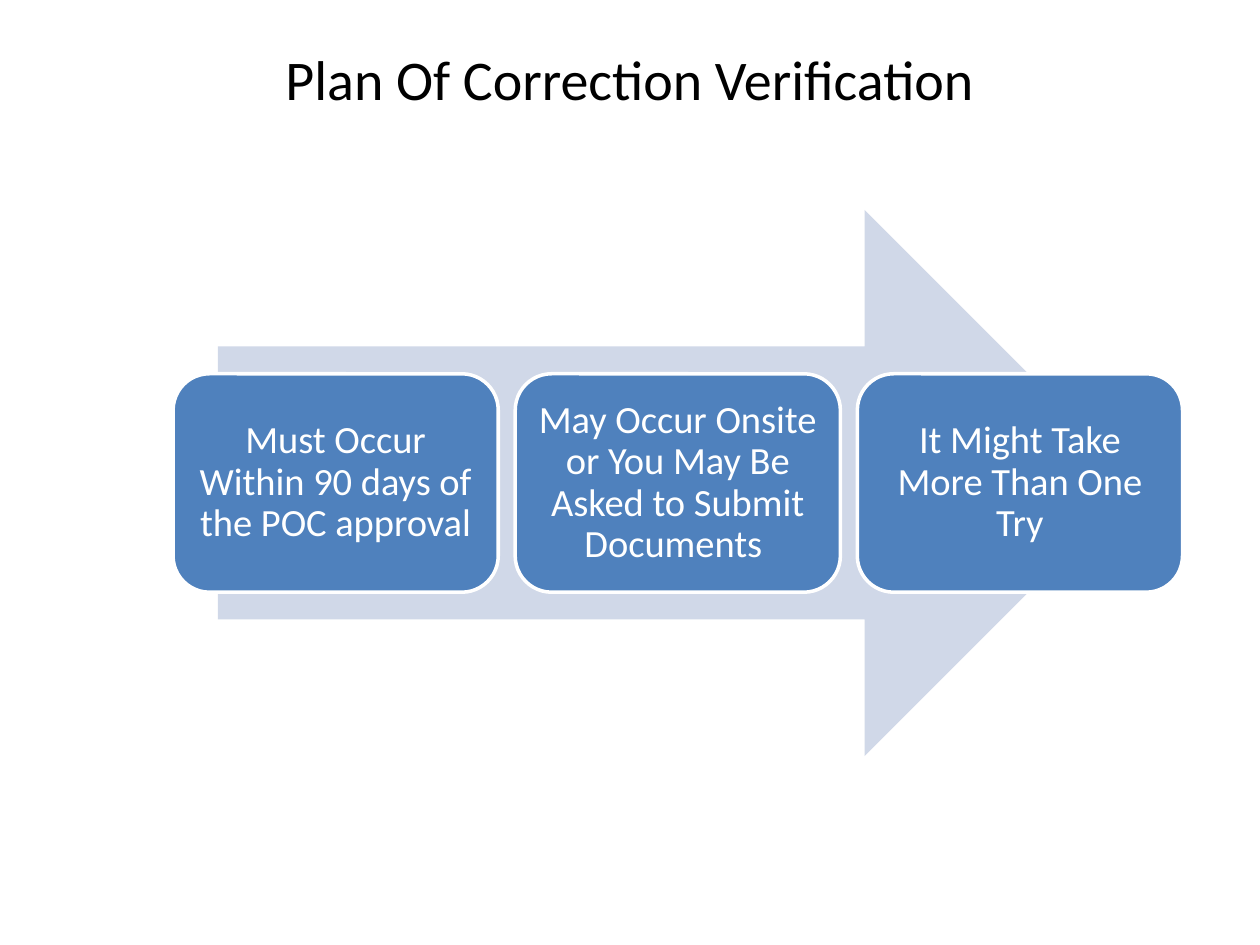
"""Build the Plan Of Correction Verification slide."""
from pptx import Presentation
from pptx.dml.color import RGBColor
from pptx.enum.shapes import MSO_SHAPE
from pptx.enum.text import MSO_ANCHOR, PP_ALIGN
from pptx.util import Pt

ARROW = MSO_SHAPE.RIGHT_ARROW
CARD = MSO_SHAPE.ROUNDED_RECTANGLE
TOP, MIDDLE = MSO_ANCHOR.TOP, MSO_ANCHOR.MIDDLE
CENTER = PP_ALIGN.CENTER
COLORS = {"text": "000000", "arrow": "D0D8E8", "card": "4F81BD", "white": "FFFFFF"}
STEPS = [
    "Must Occur Within 90 days of the POC approval",
    "May Occur Onsite or You May Be Asked to Submit Documents ",
    "It Might Take More Than One Try",
]


def rgb(name):
    return RGBColor.from_string(COLORS[name])


def write(tf, text, size, color, font="Calibri", anchor=MIDDLE, spacing=None):
    tf.word_wrap = True
    tf.vertical_anchor = anchor
    p = tf.paragraphs[0]
    p.alignment = CENTER
    p.line_spacing = spacing
    r = p.add_run()
    r.text = text
    r.font.name, r.font.size = font, Pt(size)
    r.font.color.rgb = rgb(color)


class Deck:
    def __init__(self, font="Calibri"):
        self.font = font
        self.prs = Presentation()
        self.prs.slide_width, self.prs.slide_height = Pt(720), Pt(540)
        self.s = self.prs.slides.add_slide(self.prs.slide_layouts[5])

    def title(self, text, x, y, w, h):
        sp = self.s.shapes.title
        sp.left, sp.top, sp.width, sp.height = Pt(x), Pt(y), Pt(w), Pt(h)
        write(sp.text_frame, text, 32, "text", font=self.font, anchor=TOP)

    def shape(self, kind, x, y, w, h, fill):
        sp = self.s.shapes.add_shape(kind, Pt(x), Pt(y), Pt(w), Pt(h))
        sp.shadow.inherit = False
        sp.fill.solid()
        sp.fill.fore_color.rgb = rgb(fill)
        sp.line.fill.background()
        return sp

    def card(self, text, x, y, w, h):
        sp = self.shape(CARD, x, y, w, h, "card")
        sp.line.color.rgb = rgb("white")
        sp.line.width = Pt(2)
        tf = sp.text_frame
        tf.margin_left = tf.margin_right = tf.margin_top = tf.margin_bottom = Pt(6.6)
        write(tf, text, 22, "white", font=self.font, spacing=0.9)


def main():
    deck = Deck()
    deck.title("Plan Of Correction Verification", 36, 21.6, 648, 90)
    deck.shape(ARROW, 124.5, 120, 525.6, 312, "arrow")
    for i, text in enumerate(STEPS):
        deck.card(text, 98.9 + i * 195.5, 213.6, 185.8, 124.8)
    deck.prs.save("out.pptx")


if __name__ == "__main__":
    main()
